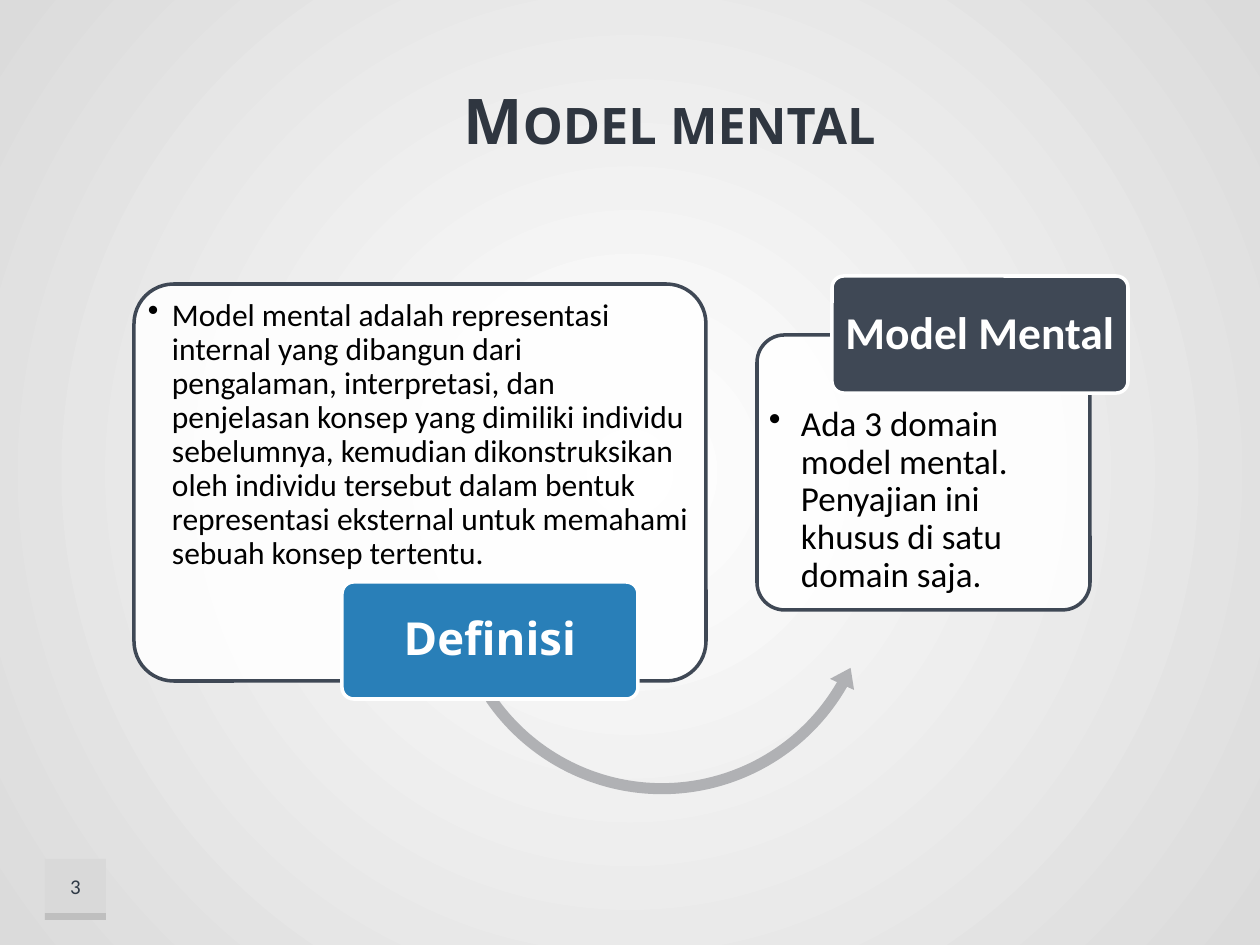
from lxml import etree
from pptx import Presentation
from pptx.dml.color import RGBColor
from pptx.enum.shapes import MSO_SHAPE
from pptx.enum.text import MSO_ANCHOR, PP_ALIGN
from pptx.oxml.ns import qn
from pptx.util import Pt

RECTANGLE = MSO_SHAPE.RECTANGLE
ROUNDED = MSO_SHAPE.ROUNDED_RECTANGLE
LEFT_ARC_ARROW = MSO_SHAPE.LEFT_CIRCULAR_ARROW
CENTER = PP_ALIGN.CENTER
TOP = MSO_ANCHOR.TOP
MIDDLE = MSO_ANCHOR.MIDDLE

WHITE = RGBColor(0xFF, 0xFF, 0xFF)
BLACK = RGBColor(0x00, 0x00, 0x00)
EDGE_GRAY = RGBColor(0xDB, 0xDB, 0xDB)
TILE_GRAY = RGBColor(0xD9, 0xD9, 0xD9)
BAR_GRAY = RGBColor(0xBF, 0xBF, 0xBF)
ARROW_GRAY = RGBColor(0xB0, 0xB1, 0xB4)
TITLE_INK = RGBColor(0x2F, 0x36, 0x40)
NUMBER_INK = RGBColor(0x2F, 0x3A, 0x46)
SLATE = RGBColor(0x3F, 0x48, 0x55)
BLUE = RGBColor(0x29, 0x7F, 0xB8)

HEADING_FONT = "Open Sans"
BODY_FONT = "Calibri"
BADGE_SIZE = (296, 117)


def px(length):
    return round(length * 914400 / 126)


class SlideBuilder:
    def __init__(self, page):
        self.page = page

    def radial_background(self, inner, outer):
        fill = self.page.background.fill
        fill.gradient()
        for stop, color, position in zip(fill.gradient_stops, (inner, outer), (0, 1)):
            stop.color.rgb = color
            stop.position = position
        gradient = self.page.element.find(".//" + qn("a:gradFill"))
        gradient.remove(gradient.find(qn("a:lin")))
        circle = etree.SubElement(gradient, qn("a:path"), path="circle")
        sides = dict.fromkeys("ltrb", "50000")
        etree.SubElement(circle, qn("a:fillToRect"), **sides)

    def shape(self, kind, frame, fill, line=None, adjustments=()):
        shape = self.page.shapes.add_shape(kind, *map(px, frame))
        shape.shadow.inherit = False
        shape.fill.solid()
        shape.fill.fore_color.rgb = fill
        if line is None:
            shape.line.fill.background()
        else:
            shape.line.color.rgb = line
            shape.line.width = Pt(2)
        for index, value in enumerate(adjustments):
            shape.adjustments[index] = value
        return shape

    def set_text(self, box, text, size, color, font=BODY_FONT, bold=False,
                 anchor=MIDDLE, inset=None, spacing=None, hanging=0, small_caps=False):
        frame = box.text_frame
        frame.word_wrap = True
        frame.vertical_anchor = anchor
        if inset is not None:
            frame.margin_left = frame.margin_right = px(inset)
            frame.margin_top = frame.margin_bottom = px(inset)
        para = frame.paragraphs[0]
        para.text = text
        if hanging:
            properties = para._p.get_or_add_pPr()
            properties.set("marL", str(px(hanging)))
            properties.set("indent", str(-px(hanging)))
            etree.SubElement(properties, qn("a:buChar"), char="•")
        else:
            para.alignment = CENTER
        if spacing:
            para.line_spacing = spacing
        para.font.name = font
        para.font.size = Pt(size)
        para.font.bold = bold
        para.font.color.rgb = color
        if small_caps:
            para._p.pPr.find(qn("a:defRPr")).set("cap", "small")

    def text(self, frame, text, size, color, **style):
        box = self.page.shapes.add_textbox(*map(px, frame))
        self.set_text(box, text, size, color, **style)

    def panel(self, frame, text_frame, text, size, hanging):
        panel = self.shape(ROUNDED, frame, WHITE, SLATE, [0.1])
        color = panel.element.spPr.find(qn("a:solidFill"))[0]
        etree.SubElement(color, qn("a:alpha"), val="90000")
        self.text(text_frame, text, size, BLACK, anchor=TOP, inset=5,
                  spacing=0.9, hanging=hanging)

    def badge(self, left, top, text, fill, font):
        badge = self.shape(ROUNDED, (left, top, *BADGE_SIZE), fill, WHITE, [0.1])
        self.set_text(badge, text, 26, WHITE, font=font, bold=True, inset=6, spacing=0.9)


def main():
    deck = Presentation()
    deck.slide_width, deck.slide_height = px(1260), px(945)
    slide = SlideBuilder(deck.slides.add_slide(deck.slide_layouts[6]))
    slide.radial_background(WHITE, EDGE_GRAY)

    slide.shape(RECTANGLE, (45, 859, 61, 61), TILE_GRAY)
    slide.shape(RECTANGLE, (45, 913, 61, 7), BAR_GRAY)
    slide.text((194, 76, 951, 86), "Model mental", 36, TITLE_INK,
               font=HEADING_FONT, bold=True, small_caps=True)
    slide.text((45, 859, 61, 54), "3", 12, NUMBER_INK)

    slide.panel(
        (134, 284, 572, 397), (143, 294, 553, 294),
        "Model mental adalah representasi internal yang dibangun dari pengalaman, "
        "interpretasi, dan penjelasan konsep yang dimiliki individu sebelumnya, "
        "kemudian dikonstruksikan oleh individu tersebut dalam bentuk representasi "
        "eksternal untuk memahami sebuah konsep tertentu.",
        18, 24)
    slide.shape(LEFT_ARC_ARROW, (441, 360, 442, 442), ARROW_GRAY,
                adjustments=[0.025, 3.087, 17.929, 87.332, 0.03])
    slide.badge(342, 582, "Definisi", BLUE, HEADING_FONT)
    slide.panel(
        (757, 335, 333, 275), (764, 401, 320, 203),
        "Ada 3 domain model mental. Penyajian ini khusus di satu domain saja.",
        20, 32)
    slide.badge(832, 276, "Model Mental", SLATE, BODY_FONT)

    deck.save("out.pptx")


if __name__ == "__main__":
    main()
